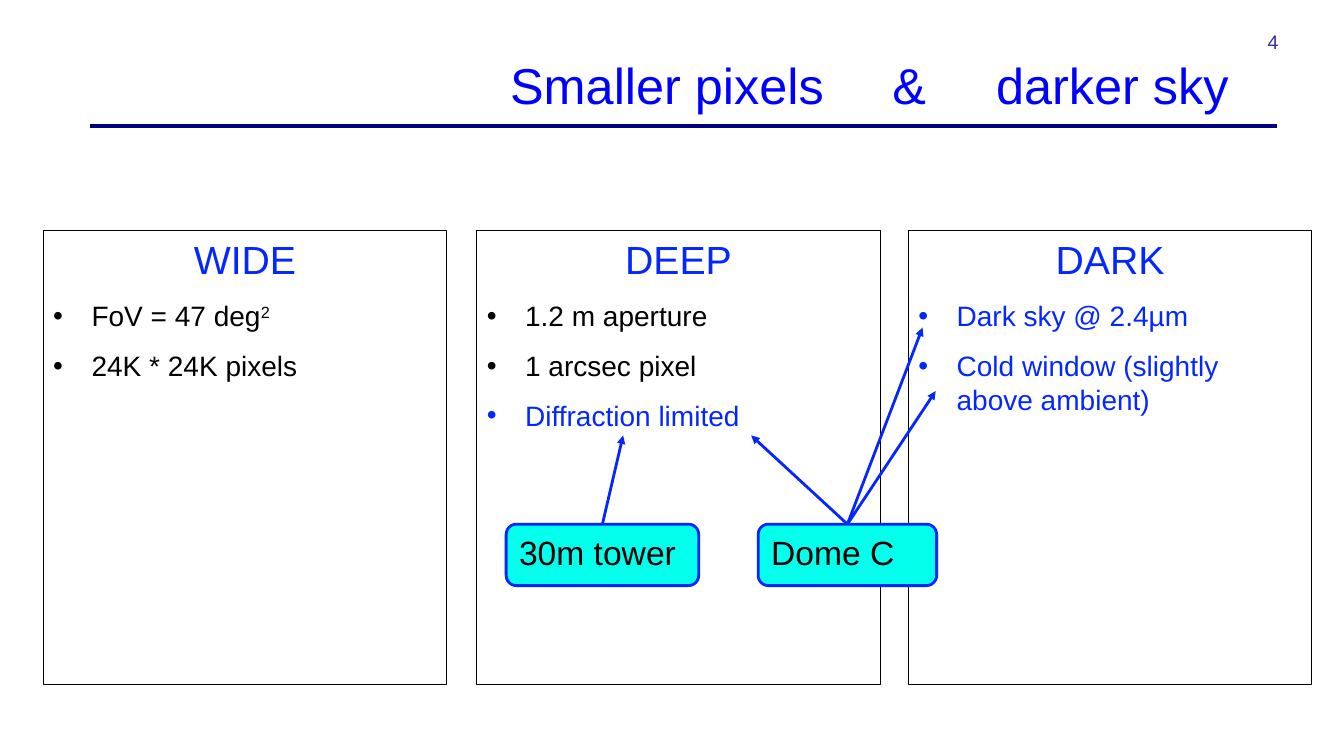
"""Build the slide on smaller pixels and darker sky."""
from lxml import etree
from pptx import Presentation
from pptx import util as u
from pptx.dml.color import RGBColor
from pptx.enum import shapes, text
from pptx.oxml.ns import qn

HUES = {"title": "0000FF", "rule": "000080", "blue": "0527FF",
        "black": "000000", "cyan": "05FFED", "page": "333399"}
PANELS = [
    (0.43, "WIDE", [("black", "FoV = 47 deg", "2"),
                    ("black", "24K * 24K pixels", "")]),
    (4.73, "DEEP", [("black", "1.2 m aperture", ""),
                    ("black", "1 arcsec pixel", ""),
                    ("blue", "Diffraction limited", "")]),
    (9.01, "DARK", [("blue", "Dark sky @ 2.4µm", ""),
                    ("blue", "Cold window (slightly above ambient)", "")]),
]
SITES = [
    (5.02, 1.91, "30m tower", [(6.18, 4.32)]),
    (7.52, 1.77, "Dome C", [(7.45, 4.32), (9.15, 3.25), (9.28, 3.88)]),
]


class Deck:
    """Hold the style and the current slide."""

    def __init__(self):
        """Open a deck with one title-only slide."""
        self.prs = Presentation()
        self.prs.slide_width = u.Inches(13.33)
        self.prs.slide_height = u.Inches(7.5)
        self.slide = self.prs.slides.add_slide(self.prs.slide_layouts[5])
        self.font = "Arial"

    def hue(self, name):
        """Return a named colour."""
        return RGBColor.from_string(HUES[name])

    def run(self, para, words, size, hue):
        """Add one styled run."""
        run = para.add_run()
        run.text = words
        run.font.name = self.font
        run.font.size = u.Pt(size)
        run.font.color.rgb = self.hue(hue)
        return run

    def title(self, parts, stops):
        """Set the title, its parts held apart by tab stops."""
        box = self.slide.shapes.title
        box.left, box.top = u.Inches(4.96), u.Inches(0.42)
        box.width, box.height = u.Inches(7.87), u.Inches(0.83)
        frame = box.text_frame
        frame.auto_size = text.MSO_AUTO_SIZE.NONE
        frame.vertical_anchor = text.MSO_ANCHOR.MIDDLE
        para = frame.paragraphs[0]
        para.alignment = text.PP_ALIGN.LEFT
        tabs = etree.SubElement(para._p.get_or_add_pPr(), qn("a:tabLst"))
        for stop in stops:
            etree.SubElement(tabs, qn("a:tab"), pos=str(u.Inches(stop)), algn="l")
        self.run(para, "\t".join(parts), 36, "title")

    def label(self, x, y, w, h, words, size, hue):
        """Add a right-aligned text box."""
        box = self.slide.shapes.add_textbox(*map(u.Inches, (x, y, w, h)))
        box.text_frame.word_wrap = True
        para = box.text_frame.paragraphs[0]
        para.alignment = text.PP_ALIGN.RIGHT
        self.run(para, words, size, hue)

    def box(self, kind, at, line, width, fill=None):
        """Add an outlined shape with text at its top left."""
        box = self.slide.shapes.add_shape(kind, *map(u.Inches, at))
        box.shadow.inherit = False
        box.line.color.rgb = self.hue(line)
        box.line.width = u.Pt(width)
        if fill:
            box.fill.solid()
            box.fill.fore_color.rgb = self.hue(fill)
        else:
            box.fill.background()
        frame = box.text_frame
        frame.word_wrap = True
        frame.vertical_anchor = text.MSO_ANCHOR.TOP
        frame.paragraphs[0].alignment = text.PP_ALIGN.LEFT
        return box

    def panel(self, x, head, items):
        """Add a framed panel with a heading and bullets."""
        at = (x, 2.29, 4, 4.5)
        box = self.box(shapes.MSO_SHAPE.RECTANGLE, at, "black", 0.75)
        frame = box.text_frame
        frame.paragraphs[0].alignment = text.PP_ALIGN.CENTER
        self.run(frame.paragraphs[0], head, 28, "blue")
        for hue, words, power in items:
            para = frame.add_paragraph()
            para.alignment = text.PP_ALIGN.LEFT
            para.space_before = u.Pt(11.5)
            props = para._p.get_or_add_pPr()
            props.set("marL", str(u.Inches(0.38)))
            props.set("indent", str(u.Inches(-0.38)))
            etree.SubElement(props, qn("a:buFont"), typeface=self.font)
            etree.SubElement(props, qn("a:buChar"), char="•")
            self.run(para, words, 20, hue)
            if power:
                run = self.run(para, power, 20, hue)
                run.font._element.set("baseline", "30000")

    def site(self, x, w, words):
        """Add a rounded site box."""
        at = (x, 5.2, w, 0.61)
        box = self.box(shapes.MSO_SHAPE.ROUNDED_RECTANGLE, at, "blue", 2, "cyan")
        self.run(box.text_frame.paragraphs[0], words, 24, "black")
        return box

    def line(self, start, end, hue, width):
        """Add a straight line."""
        line = self.slide.shapes.add_connector(
            shapes.MSO_CONNECTOR.STRAIGHT, *map(u.Inches, start + end))
        line.line.color.rgb = self.hue(hue)
        line.line.width = u.Pt(width)
        etree.SubElement(line._element.spPr, qn("a:effectLst"))
        return line

    def arrow(self, box, end):
        """Add an arrow from the top of a box."""
        line = self.line((box.left.inches, box.top.inches), end, "blue", 2)
        line.begin_connect(box, 0)
        etree.SubElement(line.line._get_or_add_ln(), qn("a:tailEnd"), type="triangle")


def main():
    """Build and save the slide."""
    deck = Deck()
    deck.line((0.89, 1.25), (12.67, 1.25), "rule", 2.5)
    deck.title(["Smaller pixels", "&", "darker sky"], [3.79, 4.82])
    deck.label(10, 0.25, 2.78, 0.42, "4", 14, "page")
    for x, head, items in PANELS:
        deck.panel(x, head, items)
    for x, w, words, ends in SITES:
        box = deck.site(x, w, words)
        for end in ends:
            deck.arrow(box, end)
    deck.prs.save("out.pptx")


if __name__ == "__main__":
    main()
